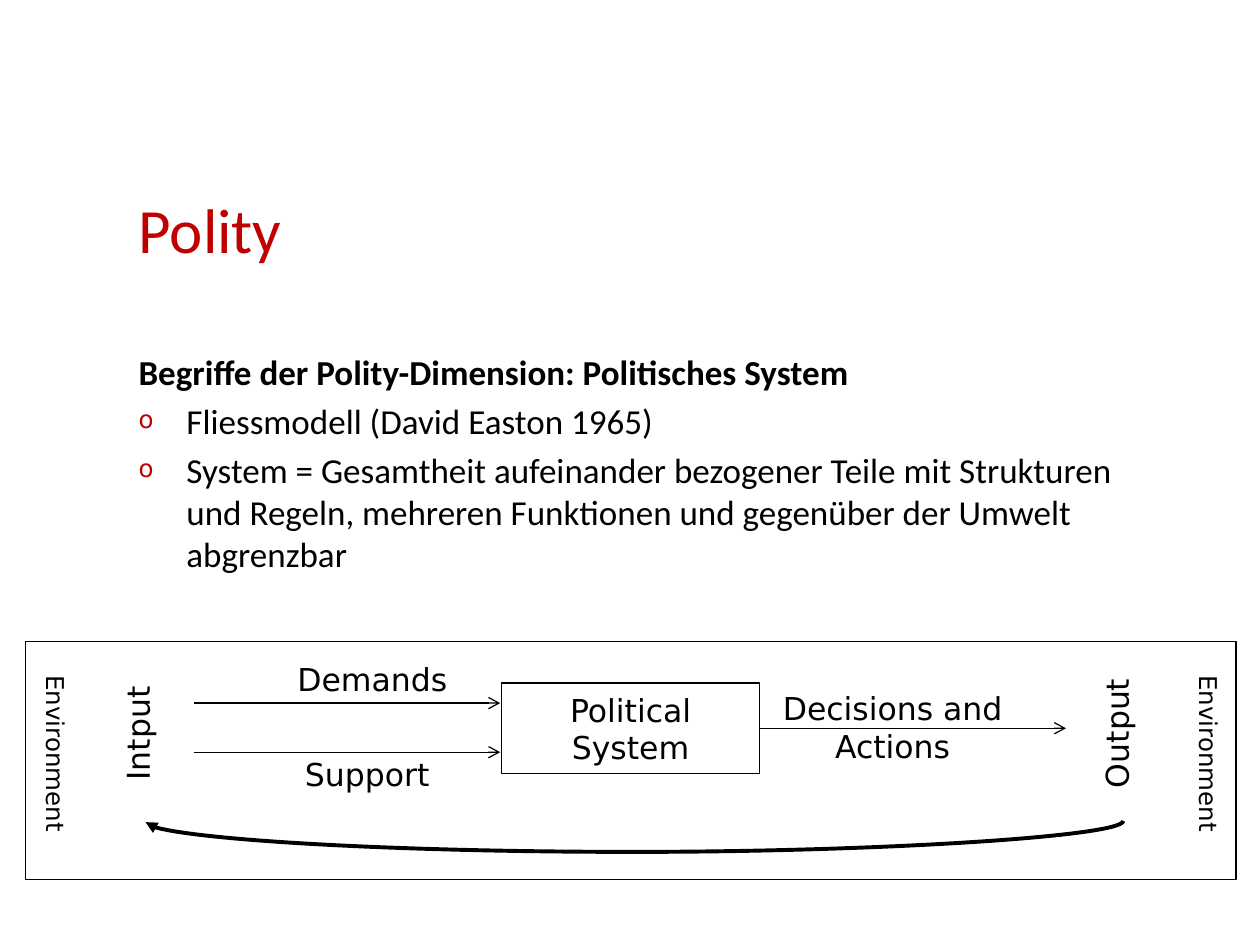
"""Build the Polity slide with Easton's flow model of the political system."""
from lxml.etree import SubElement
from pptx import Presentation
from pptx.dml.color import RGBColor
from pptx.enum.shapes import MSO_CONNECTOR, MSO_SHAPE
from pptx.enum.text import MSO_ANCHOR, MSO_AUTO_SIZE, PP_ALIGN
from pptx.oxml.ns import qn
from pptx.util import Inches, Pt

BLACK, RED = "000000", "C00000"

prs = Presentation()
prs.slide_width, prs.slide_height = Inches(10), Inches(7.5)
U = prs.slide_width / 100
s = prs.slides.add_slide(prs.slide_layouts[1])


def grid(*cells):
    """Turn grid cells, 100 to the slide's width, into lengths."""
    return [round(cell * U) for cell in cells]


def write(p, text, size, font, color=BLACK, bold=False):
    """Add one formatted run to a paragraph."""
    r = p.add_run()
    r.text = text
    r.font.size, r.font.name, r.font.bold = Pt(size), font, bold
    r.font.color.rgb = RGBColor.from_string(color)


title, body = s.shapes.title, s.placeholders[1]
title.left, title.top, title.width, title.height = grid(10, 9.1, 80, 12.5)
body.left, body.top, body.width, body.height = grid(10, 27.3, 80, 20.5)
for sp in (title, body):
    sp.text_frame.auto_size = MSO_AUTO_SIZE.NONE
title.text_frame.vertical_anchor = MSO_ANCHOR.BOTTOM
p = title.text_frame.paragraphs[0]
p.alignment = PP_ALIGN.LEFT
write(p, "Polity", 36, "Calibri", RED)

tf = body.text_frame
p = tf.paragraphs[0]
p.space_before = Pt(0)
pPr = p._p.get_or_add_pPr()
pPr.set("marL", "0")
pPr.set("indent", "0")
SubElement(pPr, qn("a:buNone"))
write(p, "Begriffe der Polity-Dimension: Politisches System", 20, "Calibri", bold=True)
for text in (
    "Fliessmodell (David Easton 1965)",
    "System = Gesamtheit aufeinander bezogener Teile mit Strukturen und Regeln, "
    "mehreren Funktionen und gegenüber der Umwelt abgrenzbar",
):
    p = tf.add_paragraph()
    p.space_before = Pt(4)
    pPr = p._p.get_or_add_pPr()
    pPr.set("marL", str(Inches(0.38)))
    pPr.set("indent", str(-Inches(0.38)))
    SubElement(SubElement(pPr, qn("a:buClr")), qn("a:srgbClr"), val=RED)
    SubElement(pPr, qn("a:buSzPct"), val="70000")
    SubElement(pPr, qn("a:buFont"), typeface="DejaVu Sans")
    SubElement(pPr, qn("a:buChar"), char="o")
    write(p, text, 20, "Calibri")

frames = []
for cells in ((2, 50.9, 96.1, 18.9), (39.8, 54.2, 20.5, 7.2)):
    sp = s.shapes.add_shape(MSO_SHAPE.RECTANGLE, *grid(*cells))
    sp.shadow.inherit = False
    sp.fill.background()
    sp.line.color.rgb = RGBColor.from_string(BLACK)
    sp.line.width = Pt(0.75)
    frames.append(sp)
environment, system = frames
tf = system.text_frame
tf.word_wrap = True
p = tf.paragraphs[0]
p.alignment = PP_ALIGN.CENTER
write(p, "Political System", 18, "DejaVu Sans")

for text, size, vert, cells in (
    ("Demands", 18, "horz", (19.7, 51.9, 19.7, 4)),
    ("Support", 18, "horz", (19.3, 59.4, 19.7, 4)),
    ("Decisions and Actions", 18, "horz", (61, 54.2, 19.7, 7.1)),
    ("Intput", 18, "vert270", (8.9, 51.1, 5, 14.2)),
    ("Output", 18, "vert270", (86.6, 51.1, 5, 14.2)),
    ("Environment", 14, "vert", (1.7, 51.9, 4.4, 15.8)),
    ("Environment", 14, "vert", (93.2, 51.9, 4.4, 15.8)),
):
    tf = s.shapes.add_textbox(*grid(*cells)).text_frame
    tf.word_wrap = True
    tf._txBody.bodyPr.set("vert", vert)
    p = tf.paragraphs[0]
    p.alignment = PP_ALIGN.CENTER
    write(p, text, size, "DejaVu Sans")

arrows = []
for kind, width, head, cells in (
    (MSO_CONNECTOR.STRAIGHT, 0.75, "arrow", (15.4, 55.8, 39.7, 55.8)),
    (MSO_CONNECTOR.STRAIGHT, 0.75, "arrow", (15.4, 59.7, 39.7, 59.7)),
    (MSO_CONNECTOR.STRAIGHT, 0.75, "arrow", (60.3, 57.8, 84.6, 57.8)),
    (MSO_CONNECTOR.CURVE, 2.25, "triangle", (50.3, 26.4, 50.4, 104)),
):
    line = s.shapes.add_connector(kind, *grid(*cells))
    line.line.color.rgb = RGBColor.from_string(BLACK)
    line.line.width = Pt(width)
    SubElement(line.line._get_or_add_ln(), qn("a:tailEnd"), type=head)
    SubElement(line._element.spPr, qn("a:effectLst"))
    arrows.append(line)
demands, support, decisions, feedback = arrows
decisions.begin_connect(system, 3)

spPr = feedback._element.spPr
spPr.find(qn("a:xfrm")).set("rot", "5400000")
avLst = spPr.find(qn("a:prstGeom")).find(qn("a:avLst"))
SubElement(avLst, qn("a:gd"), name="adj1", fmla="val 2500000")

prs.save("out.pptx")
